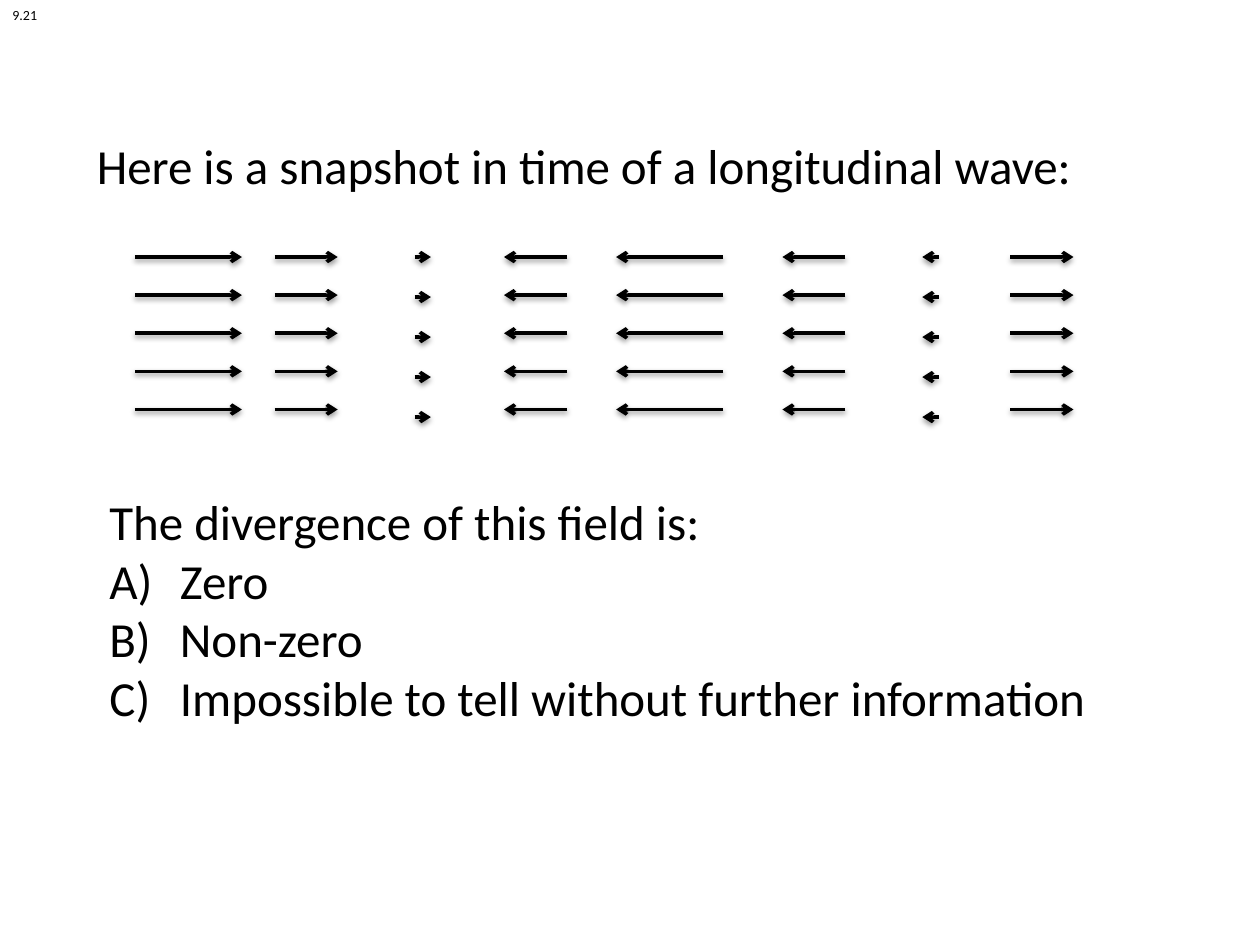
from lxml.etree import SubElement
from pptx import Presentation
from pptx.dml.color import RGBColor
from pptx.enum.shapes import MSO_CONNECTOR
from pptx.enum.text import MSO_AUTO_SIZE
from pptx.oxml.ns import qn
from pptx.util import Inches, Pt

INK = "000000"
FONT = "Calibri"
ROWS = 5
FIELD_BOX = (1.07, 2.04, 7.45, 1.21)
SMALL_SPREAD = 1.05  # the shortest arrows stand slightly further apart
LONG, MEDIUM, SHORT = 0.85, 0.5, 0.13
# Tail of each column relative to the field's left edge, signed arrow length
COLUMNS = [
    (0, LONG), (1.11, MEDIUM), (2.22, SHORT), (3.43, -MEDIUM),
    (4.67, -LONG), (5.64, -MEDIUM), (6.38, -SHORT), (6.95, MEDIUM),
]


def color(hex_string):
    return RGBColor.from_string(hex_string)


def add_shadow(arrow):
    effects = SubElement(arrow._element.spPr, qn("a:effectLst"))
    shadow = SubElement(effects, qn("a:outerShdw"), blurRad=str(Pt(3.1)),
                        dist=str(Pt(1.6)), dir="5400000", rotWithShape="0")
    ink = SubElement(shadow, qn("a:srgbClr"), val=INK)
    SubElement(ink, qn("a:alpha"), val="38000")


def add_arrow(shapes, tail, head, y):
    arrow = shapes.add_connector(
        MSO_CONNECTOR.STRAIGHT, Inches(tail), Inches(y), Inches(head), Inches(y))
    arrow.line.color.rgb = color(INK)
    arrow.line.width = Pt(2)
    SubElement(arrow.line._get_or_add_ln(), qn("a:tailEnd"), type="arrow")
    add_shadow(arrow)


def add_wave_field(slide, box):
    left, top, _, height = box
    for offset, length in COLUMNS:
        column = slide.shapes.add_group_shape()
        spread = SMALL_SPREAD if abs(length) == SHORT else 1
        row_gap = height * spread / (ROWS - 1)
        tail = left + offset
        for row in range(ROWS):
            add_arrow(column.shapes, tail, tail + length, top + row * row_gap)


def add_text(slide, box, lines, size, wrap=True):
    frame = slide.shapes.add_textbox(*map(Inches, box)).text_frame
    frame.word_wrap = wrap
    frame.auto_size = MSO_AUTO_SIZE.SHAPE_TO_FIT_TEXT
    frame.text = "\n".join(lines)
    for paragraph in frame.paragraphs:
        font = paragraph.runs[0].font
        font.name, font.size = FONT, Pt(size)
        font.color.rgb = color(INK)
    return frame


def add_question(slide, box, question, answers):
    frame = add_text(slide, box, [question, *answers], 28)
    indent = Inches(0.56)
    for answer in frame.paragraphs[1:]:
        properties = answer._p.get_or_add_pPr()
        properties.set("marL", str(indent))
        properties.set("indent", str(-indent))
        SubElement(properties, qn("a:buFont"), typeface="+mj-lt")
        SubElement(properties, qn("a:buAutoNum"), type="alphaUcParenR")


def main():
    deck = Presentation()
    deck.slide_width, deck.slide_height = Inches(10), Inches(7.5)
    slide = deck.slides.add_slide(deck.slide_layouts[6])
    add_wave_field(slide, FIELD_BOX)
    add_text(slide, (0.67, 1.03, 8.36, 0.57),
             ["Here is a snapshot in time of a longitudinal wave:"], 28)
    add_question(slide, (0.77, 3.85, 8.36, 1.99), "The divergence of this field is:",
                 ["Zero", "Non-zero", "Impossible to tell without further information"])
    add_text(slide, (0, 0, 0.4, 0.24), ["9.21"], 8, wrap=False)
    deck.save("out.pptx")


if __name__ == "__main__":
    main()
